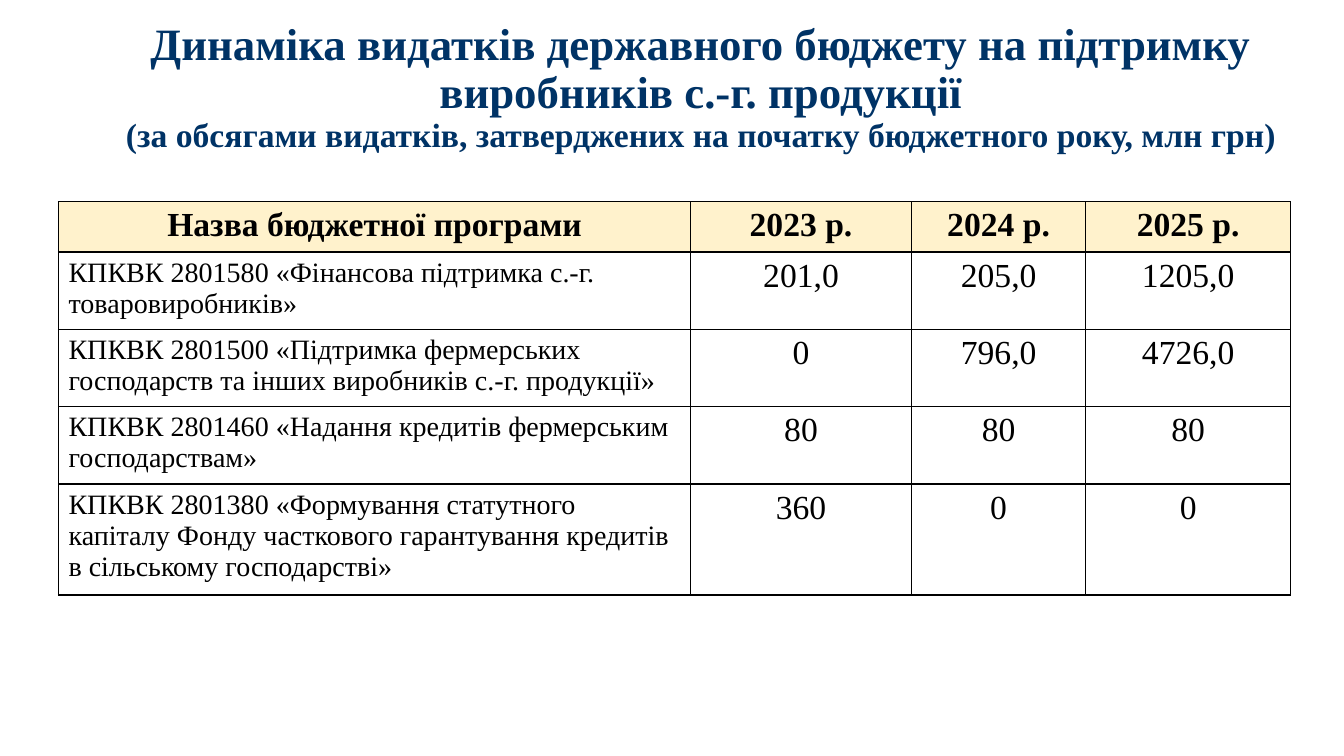
import pptx
import pptx.util
import pptx.dml.color
import pptx.enum.text
import pptx.oxml
import pptx.oxml.ns

Inches = pptx.util.Inches
Pt = pptx.util.Pt
ALIGN = pptx.enum.text.PP_ALIGN
FONT = "Times New Roman"
COLORS = {"title": "003366", "text": "000000", "head": "FFF2CC",
          "body": "FFFFFF", "line": "000000"}
TITLE = [
    ("Динаміка видатків державного бюджету на підтримку виробників с.-г. продукції", 32),
    ("(за обсягами видатків, затверджених на початку бюджетного року, млн грн)", 24),
]
WIDTHS = [6.27, 2.19, 1.73, 2.03]
HEIGHTS = [0.46, 0.72, 0.72, 0.72, 1.02]
ROWS = [
    ("Назва бюджетної програми", "2023 р.", "2024 р.", "2025 р."),
    ("КПКВК 2801580 «Фінансова підтримка с.-г. товаровиробників»",
     "201,0", "205,0", "1205,0"),
    ("КПКВК 2801500 «Підтримка фермерських господарств та інших виробників с.-г. продукції»",
     "0", "796,0", "4726,0"),
    ("КПКВК 2801460 «Надання кредитів фермерським господарствам»",
     "80", "80", "80"),
    ("КПКВК 2801380 «Формування статутного капіталу Фонду часткового гарантування "
     "кредитів в сільському господарстві»", "360", "0", "0"),
]


def color(name):
    """Return the named colour."""
    return pptx.dml.color.RGBColor.from_string(COLORS[name])


def style(font, tint, bold):
    """Set the typeface, colour and weight of a font."""
    font.name = FONT
    font.bold = bold
    font.color.rgb = color(tint)


def border(cell):
    """Draw a thin line on all four sides of a cell."""
    props = cell._tc.get_or_add_tcPr()
    for spot, side in enumerate(("lnL", "lnR", "lnT", "lnB")):
        props.insert(spot, pptx.oxml.parse_xml(
            f'<a:{side} {pptx.oxml.ns.nsdecls("a")} w="{Pt(1)}"><a:solidFill>'
            f'<a:srgbClr val="{COLORS["line"]}"/></a:solidFill></a:{side}>'))


def add_title(slide, left, top, width, height):
    """Place the heading and its smaller note in the given box."""
    box = slide.shapes.add_textbox(
        Inches(left), Inches(top), Inches(width), Inches(height))
    frame = box.text_frame
    frame.word_wrap = True
    frame.vertical_anchor = pptx.enum.text.MSO_ANCHOR.MIDDLE
    for spot, (text, size) in enumerate(TITLE):
        para = frame.add_paragraph() if spot else frame.paragraphs[0]
        para.text = text
        para.alignment = ALIGN.CENTER
        para.line_spacing = 0.9
        style(para.font, "title", True)
        para.font.size = Pt(size)


def add_budget(slide, left, top):
    """Place the table of budget programmes from the given corner."""
    table = slide.shapes.add_table(
        len(ROWS), len(WIDTHS), Inches(left), Inches(top),
        Inches(sum(WIDTHS)), Inches(sum(HEIGHTS))).table
    for col, width in zip(table.columns, WIDTHS):
        col.width = Inches(width)
    for row, (line, height) in enumerate(zip(ROWS, HEIGHTS)):
        table.rows[row].height = Inches(height)
        for col, text in enumerate(line):
            cell = table.cell(row, col)
            label = row > 0 and col == 0
            cell.fill.solid()
            cell.fill.fore_color.rgb = color("body" if row else "head")
            border(cell)
            para = cell.text_frame.paragraphs[0]
            para.text = text
            para.alignment = ALIGN.LEFT if label else ALIGN.CENTER
            style(para.font, "text", row == 0)
            para.font.size = Pt(20 if label else 24)


def main():
    """Build the slide and save it."""
    deck = pptx.Presentation()
    deck.slide_width = Inches(13.33)
    deck.slide_height = Inches(7.5)
    slide = deck.slides.add_slide(deck.slide_layouts[6])
    add_title(slide, 0.94, 0.15, 12.02, 1.45)
    add_budget(slide, 0.58, 2)
    deck.save("out.pptx")


if __name__ == "__main__":
    main()
